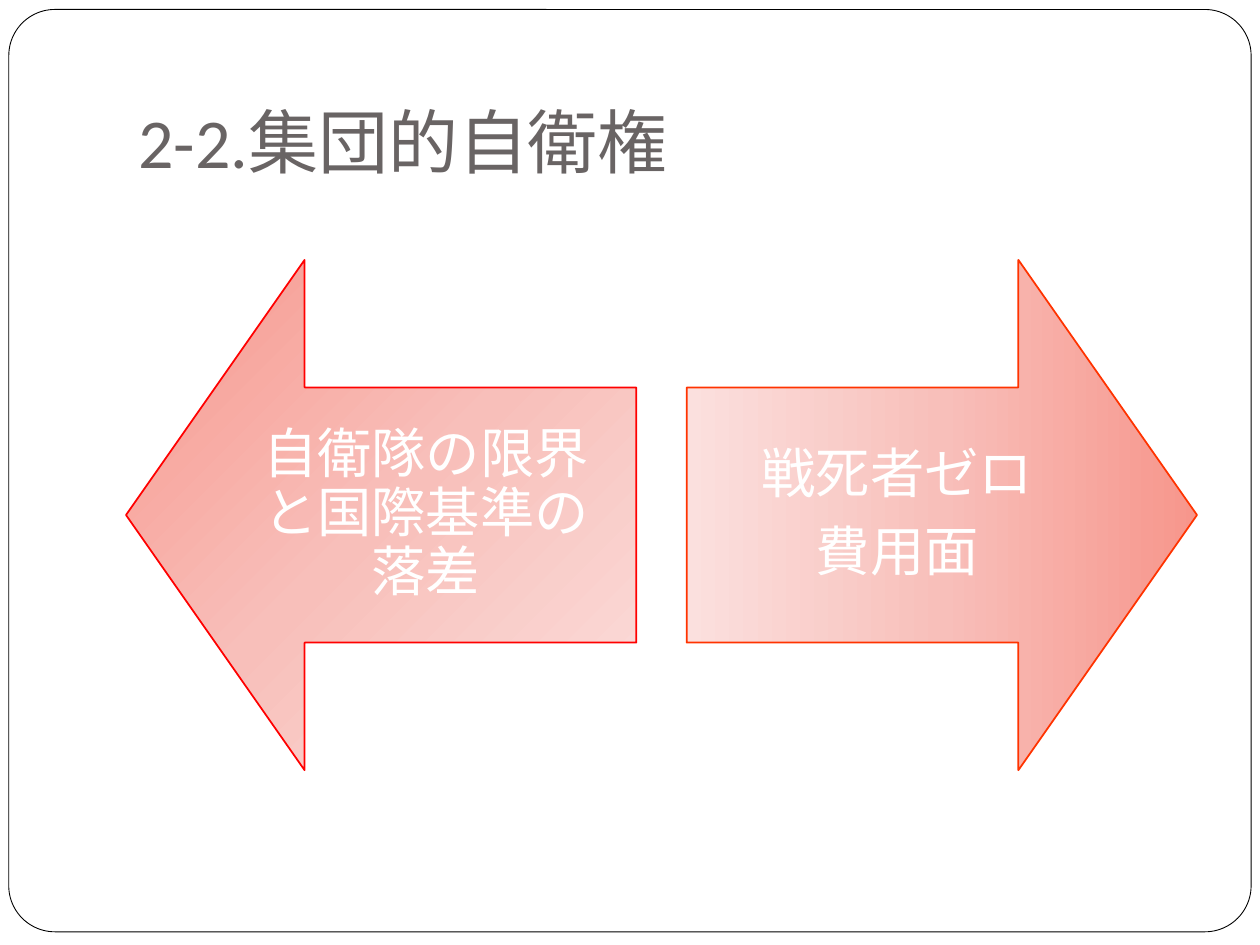
from copy import deepcopy
from dataclasses import dataclass

from pptx import Presentation
from pptx.dml.color import RGBColor
from pptx.enum.shapes import MSO_SHAPE
from pptx.enum.text import MSO_ANCHOR, PP_ALIGN
from pptx.oxml.ns import qn
from pptx.util import Inches, Pt

WIDTH, HEIGHT = Inches(10), Inches(7.5)
FONT = "Calibri"
GRADIENT = ((0, "F7968C"), (0.5, "F8BFBA"), (1, "FBE0DE"))
ARROW_SIZE = 0.405  # share of the slide width
ARROW_TOP = 0.275   # share of the slide height


@dataclass
class Arrow:
    kind: MSO_SHAPE
    left: float  # share of the slide width
    lines: tuple[str, ...]
    outline: str
    angle: int  # counter-clockwise gradient direction


ARROWS = (
    Arrow(MSO_SHAPE.LEFT_ARROW, 0.1, ("自衛隊の限界と国際基準の落差",), "FF0000", 315),
    Arrow(MSO_SHAPE.RIGHT_ARROW, 0.545, ("戦死者ゼロ", "費用面"), "FF3300", 180),
)


def color(value: str) -> RGBColor:
    return RGBColor.from_string(value)


def box(left: float, top: float, width: float, height: float) -> tuple[int, ...]:
    """Turn shares of the slide's size into lengths."""
    return (int(left * WIDTH), int(top * HEIGHT),
            int(width * WIDTH), int(height * HEIGHT))


def set_all(target, values: dict) -> None:
    for name, value in values.items():
        setattr(target, name, value)


def write(shape, lines: tuple[str, ...], size: float, ink: str,
          frame_format: dict, paragraph_format: dict) -> None:
    frame = shape.text_frame
    set_all(frame, {"word_wrap": True, **frame_format})
    for index, line in enumerate(lines):
        paragraph = frame.add_paragraph() if index else frame.paragraphs[0]
        set_all(paragraph, paragraph_format)
        run = paragraph.add_run()
        run.text = line
        set_all(run.font, {"name": FONT, "size": Pt(size)})
        run.font.color.rgb = color(ink)


def outline(shape, ink: str, width: float) -> None:
    shape.shadow.inherit = False
    shape.line.color.rgb = color(ink)
    shape.line.width = Pt(width)


def fill_gradient(shape, angle: int) -> None:
    shape.fill.gradient()
    shape.fill.gradient_angle = angle
    # The default gradient has two stops; add the middle one
    stop_list = next(shape.element.iter(qn("a:gsLst")))
    stop_list.insert(1, deepcopy(stop_list[0]))
    for stop, (position, ink) in zip(shape.fill.gradient_stops, GRADIENT):
        stop.position = position
        stop.color.rgb = color(ink)


def draw_arrow(slide, arrow: Arrow) -> None:
    height = ARROW_SIZE * WIDTH / HEIGHT
    shape = slide.shapes.add_shape(
        arrow.kind, *box(arrow.left, ARROW_TOP, ARROW_SIZE, height))
    shape.adjustments[0] = 0.5
    shape.adjustments[1] = 0.35
    outline(shape, arrow.outline, 1)
    fill_gradient(shape, arrow.angle)
    margins = {f"margin_{side}": Inches(0.24)
               for side in ("left", "top", "right", "bottom")}
    write(shape, arrow.lines, 31, "FFFFFF",
          {"vertical_anchor": MSO_ANCHOR.MIDDLE, **margins},
          {"alignment": PP_ALIGN.CENTER, "line_spacing": 0.9,
           "space_after": Pt(10.85)})


def main() -> None:
    presentation = Presentation()
    set_all(presentation, {"slide_width": WIDTH, "slide_height": HEIGHT})
    slide = presentation.slides.add_slide(presentation.slide_layouts[6])

    # Rounded frame
    frame = slide.shapes.add_shape(
        MSO_SHAPE.ROUNDED_RECTANGLE, *box(0.007, 0.01, 0.986, 0.976))
    frame.adjustments[0] = 0.05
    frame.fill.solid()
    frame.fill.fore_color.rgb = color("FFFFFF")
    outline(frame, "000000", 0.5)

    # Title
    title = slide.shapes.add_textbox(*box(0.1, 0.04, 0.85, 1 / 6))
    write(title, ("2-2.集団的自衛権",), 40, "696464",
          {"vertical_anchor": MSO_ANCHOR.BOTTOM, "margin_bottom": Inches(0.1)},
          {"alignment": PP_ALIGN.LEFT})

    # Opposing arrows
    for arrow in ARROWS:
        draw_arrow(slide, arrow)

    presentation.save("out.pptx")


if __name__ == "__main__":
    main()
